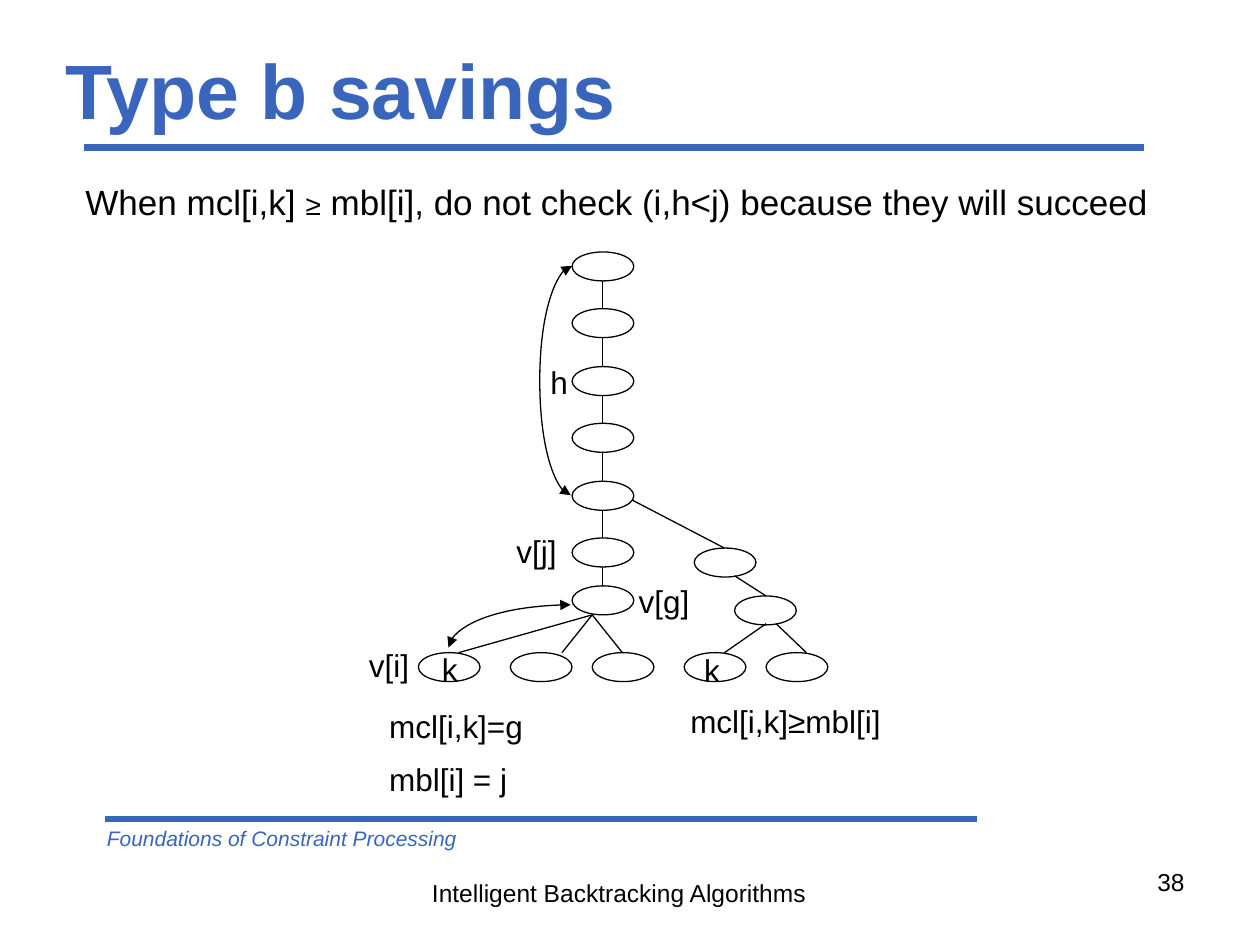
from dataclasses import dataclass
from itertools import pairwise

from lxml import etree
from pptx import Presentation
from pptx.dml.color import RGBColor
from pptx.enum.shapes import MSO_CONNECTOR, MSO_SHAPE
from pptx.enum.text import MSO_ANCHOR, PP_ALIGN
from pptx.oxml.ns import qn
from pptx.util import Emu, Pt

OVAL = MSO_SHAPE.OVAL
LINE, CURVE = MSO_CONNECTOR.STRAIGHT, MSO_CONNECTOR.CURVE
LEFT, RIGHT = PP_ALIGN.LEFT, PP_ALIGN.RIGHT
TOP, MIDDLE = MSO_ANCHOR.TOP, MSO_ANCHOR.MIDDLE
SCALE = 9144  # EMU per px, 100 px to the inch


@dataclass(frozen=True)
class Theme:
    font: str = "Arial"
    blue: RGBColor = RGBColor(0x3A, 0x65, 0xBC)
    black: RGBColor = RGBColor(0, 0, 0)
    title: int = 44
    body: int = 20
    label: int = 18
    sign: int = 16
    foot: int = 14
    course: int = 12
    thin: float = 0.75
    thick: float = 4


def px(*vals):
    return [Emu(v * SCALE) for v in vals]


class Deck:
    def __init__(self, theme):
        self.theme = theme
        self.prs = Presentation()
        self.prs.slide_width, self.prs.slide_height = px(1000, 750)
        self.slide = self.prs.slides.add_slide(self.prs.slide_layouts[5])
        self.shapes = self.slide.shapes

    def run(self, para, text, size, color=None, bold=False, italic=False):
        run = para.add_run()
        run.text = text
        font = run.font
        font.name, font.size = self.theme.font, Pt(size)
        font.bold, font.italic = bold, italic
        font.color.rgb = color or self.theme.black

    def title(self, text, box):
        shape = self.shapes.title
        shape.left, shape.top, shape.width, shape.height = px(*box)
        shape.text_frame.vertical_anchor = MIDDLE
        para = shape.text_frame.paragraphs[0]
        para.alignment = LEFT
        self.run(para, text, self.theme.title, self.theme.blue, bold=True)

    def text(self, box, paras, wrap=True, align=LEFT, gap=0, **style):
        """Add a text box; each paragraph is a list of (text, size) runs."""
        frame = self.shapes.add_textbox(*px(*box)).text_frame
        frame.word_wrap = wrap
        frame.vertical_anchor = TOP
        for i, runs in enumerate(paras):
            para = frame.add_paragraph() if i else frame.paragraphs[0]
            para.alignment = align
            if i:
                para.space_before = Pt(gap)
            for words, size in runs:
                self.run(para, words, size, **style)

    def label(self, text, x, y, w):
        self.text((x, y, w, 40), [[(text, self.theme.label)]], wrap=False)

    def node(self, x, y):
        oval = self.shapes.add_shape(OVAL, *px(x, y, 49, 23))
        oval.shadow.inherit = False
        oval.fill.background()
        oval.line.color.rgb = self.theme.black
        oval.line.width = Pt(self.theme.thin)

    def line(self, x1, y1, x2, y2, kind=LINE, color=None, width=None):
        link = self.shapes.add_connector(kind, *px(x1, y1, x2, y2))
        link.line.color.rgb = color or self.theme.black
        link.line.width = Pt(width or self.theme.thin)
        etree.SubElement(link._element.spPr, qn("a:effectLst"))
        return link

    def rule(self, x1, x2, y):
        self.line(x1, y, x2, y, color=self.theme.blue, width=self.theme.thick)

    def arc(self, ends, preset, bend=None):
        """Add a curve with an arrowhead at both ends."""
        link = self.line(*ends, kind=CURVE)
        props = link._element.spPr
        for tag in ("a:headEnd", "a:tailEnd"):
            etree.SubElement(props.find(qn("a:ln")), qn(tag), type="triangle")
        geom = props.find(qn("a:prstGeom"))
        geom.set("prst", preset)
        if bend is not None:
            guides = geom.find(qn("a:avLst"))
            etree.SubElement(guides, qn("a:gd"), name="adj1", fmla=f"val {bend}")


def main():
    theme = Theme()
    deck = Deck(theme)

    deck.rule(67, 908, 117)
    deck.rule(83, 775, 650)
    deck.text((75, 650, 525, 30),
              [[("Foundations of Constraint Processing", theme.course)]],
              color=theme.blue, italic=True)
    deck.text((333, 692, 319, 34),
              [[("Intelligent Backtracking Algorithms", theme.foot)]])
    deck.text((717, 683, 233, 52), [[("38", theme.foot)]], align=RIGHT)
    deck.title("Type b savings", (42, 33, 900, 75))
    deck.text((58, 138, 867, 45), [[
        ("When mcl[i,k] ", theme.body),
        ("≥", theme.sign),
        (" mbl[i], do not check (i,h<j) because they will succeed", theme.body),
    ]])

    # Main path and its leaves
    trunk = [round(200 + 45.4 * i) for i in range(6)] + [465]
    for y in trunk:
        deck.node(454, y)
    for above, below in pairwise(trunk):
        deck.line(478, above + 23, 478, below)
    for x, end in ((332, 364), (405, 446), (470, 494)):
        deck.node(x, 518)
        deck.line(470, 488, end, 518)

    # Right branch
    for x, y in ((551, 435), (583, 473), (543, 518), (608, 518)):
        deck.node(x, y)
    for ends in ((502, 397, 575, 435), (583, 457, 608, 473),
                 (608, 495, 575, 518), (616, 495, 640, 518)):
        deck.line(*ends)

    # The second arc is 1 px wide and bows 25 px to the left
    deck.arc((453, 480, 356, 514), "curvedConnector2")
    deck.arc((453, 393, 454, 211), "curvedConnector3", bend=-2500000)

    for text, x, y, w in (
        ("h", 427, 283, 34), ("v[i]", 283, 508, 52), ("k", 341, 511, 33),
        ("k", 549, 512, 33), ("v[j]", 400, 417, 52), ("v[g]", 497, 457, 60),
        ("mcl[i,k]≥mbl[i]", 538, 552, 171),
    ):
        deck.label(text, x, y, w)
    deck.text((299, 556, 130, 85),
              [[("mcl[i,k]=g", theme.label)], [("mbl[i] = j", theme.label)]],
              gap=9)

    deck.prs.save("out.pptx")


if __name__ == "__main__":
    main()
